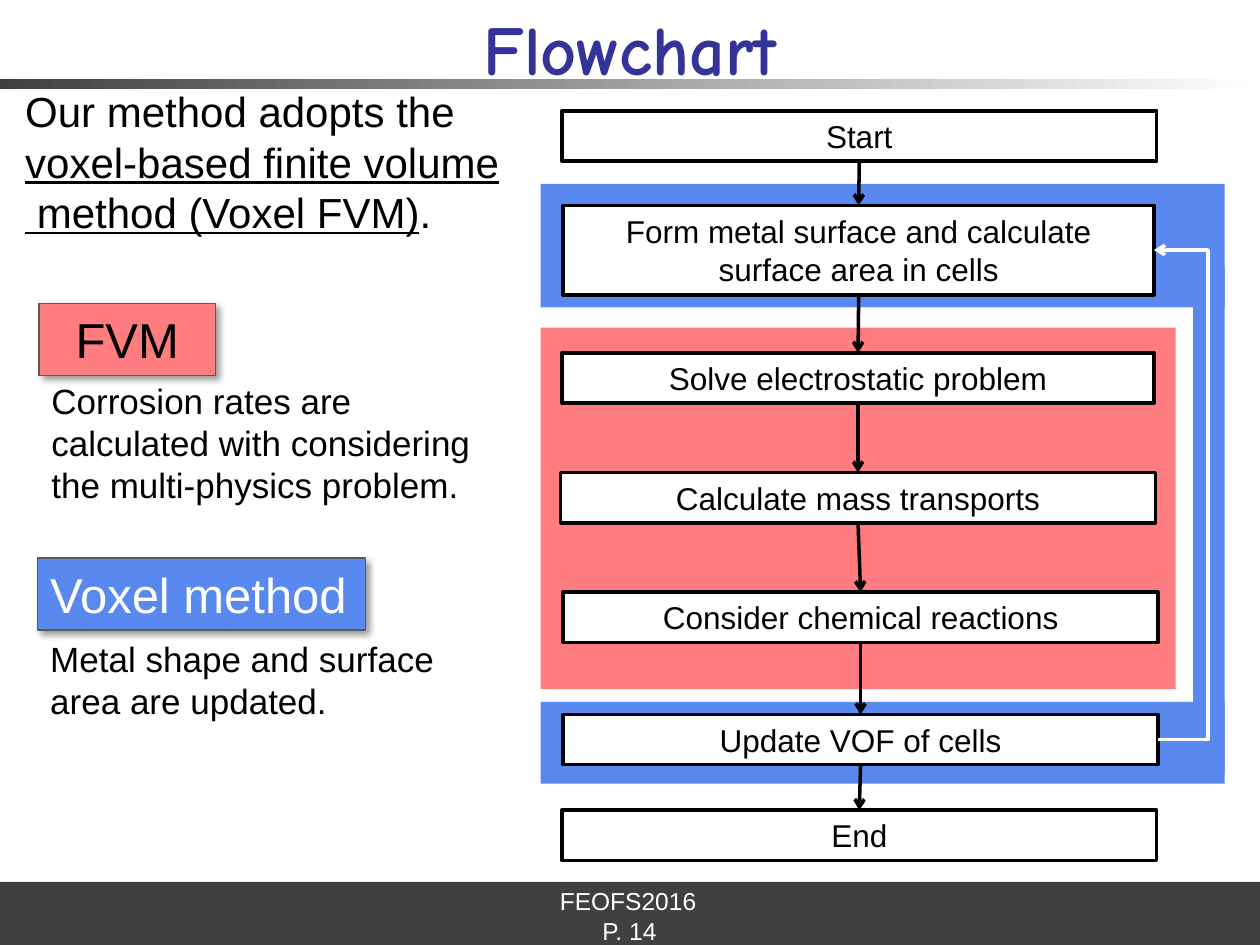
from dataclasses import dataclass

from lxml import etree
from pptx import Presentation
from pptx import util as u
from pptx.dml.color import RGBColor
from pptx.enum import shapes, text
from pptx.oxml import parse_xml
from pptx.oxml.ns import nsdecls, qn


@dataclass(frozen=True)
class Theme:
    ink: str = "000000"
    paper: str = "FFFFFF"
    bar: str = "404040"
    edge: str = "595959"
    voxel: str = "5988EF"
    fvm: str = "FF7C80"
    title: str = "333399"
    glow: str = "B7DEE8"
    body_font: str = "Arial"
    title_font: str = "Comic Neue"
    title_size: int = 40
    label_size: int = 28
    lead_size: int = 24
    note_size: int = 20
    step_size: int = 18
    foot_size: int = 14
    rule: float = 2


@dataclass(frozen=True)
class Area:
    """A rectangle in grid columns and rows."""
    left: float
    top: float
    width: float
    height: float

    def emu(self) -> list[int]:
        return [grid(n) for n in (self.left, self.top, self.width, self.height)]


@dataclass(frozen=True)
class Step:
    words: str
    area: Area


THEME = Theme()
COLUMNS, ROWS = 100, 75
WIDTH, HEIGHT = u.Inches(10), u.Inches(7.5)
CELL = WIDTH // COLUMNS
LEFT, CENTER = text.PP_ALIGN.LEFT, text.PP_ALIGN.CENTER
TOP, MIDDLE = text.MSO_ANCHOR.TOP, text.MSO_ANCHOR.MIDDLE

STEPS = [
    Step("Start", Area(44.6, 8.8, 47.2, 4)),
    Step("Form metal surface and calculate surface area in cells", Area(44.7, 16.3, 46.9, 7.1)),
    Step("Solve electrostatic problem", Area(44.6, 28, 47, 4)),
    Step("Calculate mass transports", Area(44.5, 37.5, 47.2, 4)),
    Step("Consider chemical reactions", Area(44.7, 47, 47.2, 4)),
    Step("Update VOF of cells", Area(44.7, 56.7, 47.2, 4)),
    Step("End", Area(44.6, 64.3, 47.2, 4)),
]
PANELS = [
    (Area(42.9, 14.6, 54.3, 9.8), THEME.voxel),
    (Area(94.7, 21.2, 2.5, 40.2), THEME.voxel),
    (Area(42.9, 55.7, 54.3, 6.5), THEME.voxel),
    (Area(42.9, 26, 50.4, 28.7), THEME.fvm),
]
LOOP_COLUMN = 95.9


def grid(count: float) -> int:
    return round(count * CELL)


def apply(target, values: dict) -> None:
    for name, value in values.items():
        setattr(target, name, value)


def write(box, lines: list, size: int, color: str = THEME.ink, align=LEFT, anchor=TOP,
          inset: float | None = None, font: str = THEME.body_font, bold: bool = False):
    """Fill a box with one paragraph; each line is a list of (words, underlined)."""
    frame = box.text_frame
    apply(frame, {"word_wrap": True, "vertical_anchor": anchor})
    if inset is not None:
        sides = ("left", "top", "right", "bottom")
        apply(frame, {f"margin_{side}": u.Inches(inset) for side in sides})
    para = frame.paragraphs[0]
    para.alignment = align
    for number, line in enumerate(lines):
        if number:
            para.add_line_break()
        for words, underlined in line:
            span = para.add_run()
            span.text = words
            apply(span.font, {"name": font, "size": u.Pt(size), "bold": bold,
                              "underline": underlined})
            span.font.color.rgb = RGBColor.from_string(color)
    return para


def plain(words: str) -> list:
    return [[(words, False)]]


def add_box(page, area: Area, fill: str, edge: str | None = None, weight: float = 0):
    box = page.shapes.add_shape(shapes.MSO_SHAPE.RECTANGLE, *area.emu())
    box.shadow.inherit = False
    box.fill.solid()
    box.fill.fore_color.rgb = RGBColor.from_string(fill)
    if edge:
        box.line.color.rgb = RGBColor.from_string(edge)
        box.line.width = u.Pt(weight)
    else:
        box.line.fill.background()
    return box


def add_text(page, area: Area, lines: list, size: int, **look):
    return write(page.shapes.add_textbox(*area.emu()), lines, size, **look)


def shadow(color: str, alpha: int, blur: float, distance: float):
    return parse_xml(
        f'<a:effectLst {nsdecls("a")}><a:outerShdw blurRad="{u.Pt(blur)}" '
        f'dist="{u.Pt(distance)}" dir="2700000" algn="tl" rotWithShape="0">'
        f'<a:srgbClr val="{color}"><a:alpha val="{alpha * 1000}"/></a:srgbClr>'
        f'</a:outerShdw></a:effectLst>')


def add_label(page, area: Area, words: str, fill: str, color: str, align) -> None:
    box = add_box(page, area, fill, THEME.edge, 0.75)
    flat = box._element.spPr.find(qn("a:effectLst"))
    flat.getparent().replace(flat, shadow(THEME.ink, 40, 4, 3))
    write(box, plain(words), THEME.label_size, color, align)


def add_arrow(page, kind, start: tuple, end: tuple, color: str):
    arrow = page.shapes.add_connector(kind, *(grid(n) for n in (*start, *end)))
    arrow.line.color.rgb = RGBColor.from_string(color)
    arrow.line.width = u.Pt(THEME.rule)
    etree.SubElement(arrow.line._get_or_add_ln(), qn("a:tailEnd"), type="arrow")
    etree.SubElement(arrow._element.spPr, qn("a:effectLst"))
    return arrow


def add_loop(page, source: Area, target: Area) -> None:
    """Lead from the right side of one step back up to an earlier one."""
    start = (source.left + source.width, source.top + source.height / 2)
    end = (target.left + target.width, target.top + target.height / 2)
    loop = add_arrow(page, shapes.MSO_CONNECTOR.ELBOW, start, end, THEME.paper)
    bend = round((LOOP_COLUMN - start[0]) / (end[0] - start[0]) * 100000)
    guides = loop._element.spPr.find(qn("a:prstGeom")).get_or_add_avLst()
    etree.SubElement(guides, qn("a:gd"), name="adj1", fmla=f"val {bend}")


def draw_frame(page) -> None:
    # Header rule, fading to the right
    rule = add_box(page, Area(0, 6.3, COLUMNS, 0.8), THEME.bar)
    rule.fill.gradient()
    rule.fill.gradient_angle = 0
    for stop, color in zip(rule.fill.gradient_stops, (THEME.bar, THEME.paper)):
        stop.color.rgb = RGBColor.from_string(color)
    # Footer
    add_box(page, Area(0, 70, COLUMNS, 5), THEME.bar)
    for area, words in ((Area(44, 70, 11.7, 3), "FEOFS2016"),
                        (Area(44.2, 72.8, 11.5, 2.2), "P. 14")):
        add_text(page, area, plain(words), THEME.foot_size, color=THEME.paper,
                 align=CENTER, anchor=MIDDLE, inset=0.04)
    # Title
    para = add_text(page, Area(0, 0.4, COLUMNS, 6.8), plain("Flowchart"), THEME.title_size,
                    color=THEME.title, align=CENTER, inset=0, font=THEME.title_font, bold=True)
    fill = para.runs[0].font._element.find(qn("a:solidFill"))
    fill.addnext(shadow(THEME.glow, 100, 0, 3))


def draw_notes(page) -> None:
    lead = [[("Our method adopts the", False)], [("voxel-based finite volume", True)],
            [(" method (Voxel FVM)", True), (".", False)]]
    add_text(page, Area(2, 6.8, 98, 8.6), lead, THEME.lead_size, inset=0)
    add_label(page, Area(3, 44.3, 26, 5.7), "Voxel method", THEME.voxel, THEME.paper, LEFT)
    add_label(page, Area(3.1, 24.1, 14, 5.7), "FVM", THEME.fvm, THEME.ink, CENTER)
    add_text(page, Area(3, 50.1, 32.9, 7.7),
             plain("Metal shape and surface area are updated."), THEME.note_size)
    add_text(page, Area(3.1, 29.6, 35.6, 11.1),
             plain("Corrosion rates are calculated with considering the multi-physics problem."),
             THEME.note_size)


def draw_flow(page) -> None:
    for area, fill in PANELS:
        add_box(page, area, fill)
    boxes = []
    for step in STEPS:
        box = add_box(page, step.area, THEME.paper, THEME.ink, THEME.rule)
        write(box, plain(step.words), THEME.step_size, align=CENTER, anchor=MIDDLE)
        boxes.append(box)
    for upper, lower in zip(boxes, boxes[1:]):
        arrow = add_arrow(page, shapes.MSO_CONNECTOR.STRAIGHT, (0, 0), (0, 0), THEME.ink)
        arrow.begin_connect(upper, 2)
        arrow.end_connect(lower, 0)
    add_loop(page, STEPS[5].area, STEPS[1].area)


def main() -> None:
    deck = Presentation()
    apply(deck, {"slide_width": WIDTH, "slide_height": HEIGHT})
    page = deck.slides.add_slide(deck.slide_layouts[6])
    draw_frame(page)
    draw_notes(page)
    draw_flow(page)
    deck.save("out.pptx")


if __name__ == "__main__":
    main()
